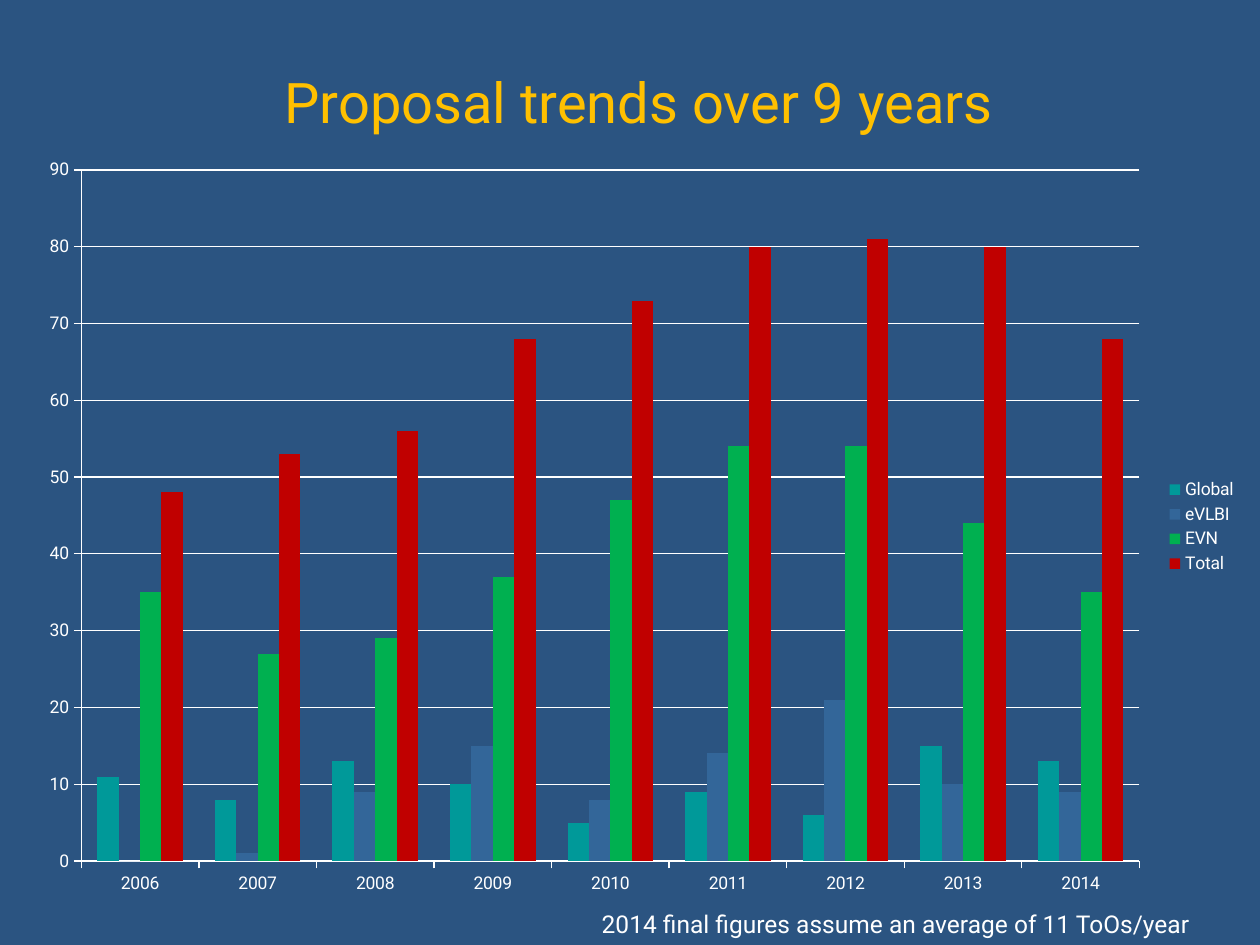
from pptx import Presentation
from pptx.chart.data import CategoryChartData
from pptx.dml.color import RGBColor
from pptx.enum.chart import XL_CHART_TYPE, XL_LEGEND_POSITION, XL_TICK_MARK
from pptx.enum.text import MSO_ANCHOR, PP_ALIGN
from pptx.util import Inches, Pt

CLUSTERED = XL_CHART_TYPE.COLUMN_CLUSTERED
LEGEND_RIGHT = XL_LEGEND_POSITION.RIGHT
TICK_OUT, TICK_NONE = XL_TICK_MARK.OUTSIDE, XL_TICK_MARK.NONE
MIDDLE, CENTER = MSO_ANCHOR.MIDDLE, PP_ALIGN.CENTER
FONT = "Roboto"
COLORS = {
    "background": "2B5481",
    "title": "FFC000",
    "text": "FFFFFF",
    "Global": "009999",
    "eVLBI": "336699",
    "EVN": "00B050",
    "Total": "C00000",
}


def color(name):
    return RGBColor.from_string(COLORS[name])


prs = Presentation()
prs.slide_width, prs.slide_height = Inches(10), Inches(7.5)
slide = prs.slides.add_slide(prs.slide_layouts[6])
slide.background.fill.solid()
slide.background.fill.fore_color.rgb = color("background")

# Proposals per year
proposals = {
    "Global": (11, 8, 13, 10, 5, 9, 6, 15, 13),
    "eVLBI": (0, 1, 9, 15, 8, 14, 21, 10, 9),
    "EVN": (35, 27, 29, 37, 47, 54, 54, 44, 35),
    "Total": (48, 53, 56, 68, 73, 80, 81, 80, 68),
}
data = CategoryChartData()
data.categories = [str(year) for year in range(2006, 2015)]
for kind, counts in proposals.items():
    data.add_series(kind, counts)
trends = slide.shapes.add_chart(
    CLUSTERED, Inches(0.2), Inches(1.15), Inches(9.72), Inches(6.06), data
).chart
trends.has_title = False
trends.font.name = FONT
trends.font.size = Pt(10)
trends.font.color.rgb = color("text")

# Columns
columns = trends.plots[0]
columns.gap_width = 150
columns.overlap = 0
columns.vary_by_categories = False
for series in columns.series:
    series.invert_if_negative = False
    series.format.fill.solid()
    series.format.fill.fore_color.rgb = color(series.name)

# Axes, gridlines and legend
years, counts_axis = trends.category_axis, trends.value_axis
counts_axis.minimum_scale, counts_axis.maximum_scale = 0, 90
counts_axis.major_unit = 10
counts_axis.has_major_gridlines = True
for axis in (years, counts_axis):
    axis.major_tick_mark = TICK_OUT
    axis.minor_tick_mark = TICK_NONE
for line in (years.format.line, counts_axis.format.line,
             counts_axis.major_gridlines.format.line):
    line.color.rgb = color("text")
    line.width = Pt(0.75)
trends.has_legend = True
trends.legend.position = LEGEND_RIGHT
trends.legend.include_in_layout = False

# Title and footnote
captions = [
    ("Proposal trends over 9 years", 0.57, 0.5, 9, 0.6, 32, "title"),
    ("2014 final figures assume an average of 11 ToOs/year",
     4.31, 7.16, 5.6, 0.34, 14, "text"),
]
for words, left, top, width, height, size, shade in captions:
    caption = slide.shapes.add_textbox(
        Inches(left), Inches(top), Inches(width), Inches(height)
    ).text_frame
    caption.word_wrap = True
    caption.vertical_anchor = MIDDLE
    caption.margin_top = caption.margin_bottom = 0
    paragraph = caption.paragraphs[0]
    paragraph.alignment = CENTER
    run = paragraph.add_run()
    run.text = words
    run.font.name = FONT
    run.font.size = Pt(size)
    run.font.color.rgb = color(shade)

prs.save("out.pptx")
